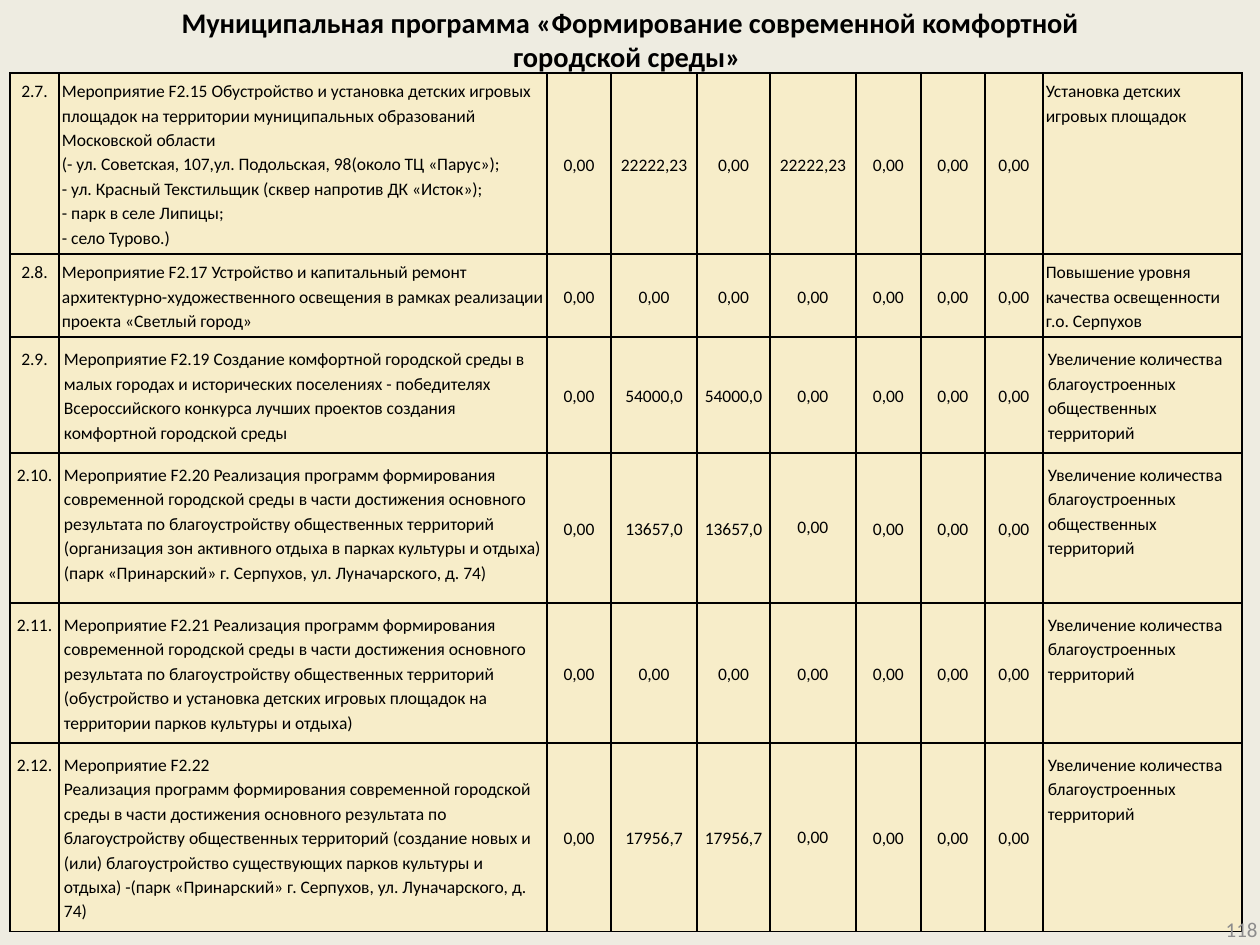
from copy import deepcopy

from lxml.etree import SubElement
from pptx import Presentation
from pptx.dml.color import RGBColor as RGB
from pptx.enum.text import MSO_ANCHOR as ANCHOR, MSO_AUTO_SIZE as AUTO, PP_ALIGN as ALIGN
from pptx.oxml.ns import qn
from pptx.util import Pt

COLORS = {"bg": "EEECE1", "cell": "F7EDC9", "text": "000000", "number": "8C8C8C"}
PX = 914400 / 126
COLS = [49, 488, 64, 86, 73, 86, 65, 64, 58, 199]
HEIGHTS = [181, 83, 115, 150, 139, 187]
TIGHT, LOOSE = (3, 5), (5, 9)
ZERO = "0,00"
PROGRAM = (
    "Реализация программ формирования современной городской среды в части достижения "
    "основного результата по благоустройству общественных территорий "
)
PARK = "(парк «Принарский» г. Серпухов, ул. Луначарского, д. 74)"
GROWTH = "Увеличение количества благоустроенных территорий"
PUBLIC_GROWTH = "Увеличение количества благоустроенных общественных территорий"

ROWS = [
    (
        "2.7.",
        "Мероприятие F2.15 Обустройство и установка детских игровых площадок на территории "
        "муниципальных образований Московской области\n"
        "(- ул. Советская, 107,ул. Подольская, 98(около ТЦ «Парус»);\v"
        "- ул. Красный Текстильщик (сквер напротив ДК «Исток»);\v"
        "- парк в селе Липицы;\v- село Турово.)",
        {1: "22222,23", 3: "22222,23"},
        "Установка детских игровых площадок",
    ),
    (
        "2.8.",
        "Мероприятие F2.17 Устройство и капитальный ремонт архитектурно-художественного "
        "освещения в рамках реализации проекта «Светлый город»",
        {},
        "Повышение уровня качества освещенности г.о. Серпухов",
    ),
    (
        "2.9.",
        "Мероприятие F2.19 Создание комфортной городской среды в малых городах и исторических "
        "поселениях - победителях Всероссийского конкурса лучших проектов создания "
        "комфортной городской среды",
        {1: "54000,0", 2: "54000,0"},
        PUBLIC_GROWTH,
    ),
    (
        "2.10.",
        "Мероприятие F2.20 " + PROGRAM
        + "(организация зон активного отдыха в парках культуры и отдыха) " + PARK,
        {1: "13657,0", 2: "13657,0"},
        PUBLIC_GROWTH,
    ),
    (
        "2.11.",
        "Мероприятие F2.21 " + PROGRAM
        + "(обустройство и установка детских игровых площадок на территории парков "
        "культуры и отдыха)",
        {},
        GROWTH,
    ),
    (
        "2.12.",
        "Мероприятие F2.22\n" + PROGRAM
        + "(создание новых и (или) благоустройство существующих парков культуры и отдыха) -" + PARK,
        {1: "17956,7", 2: "17956,7"},
        GROWTH,
    ),
]
SINGLE_SPACED = {(3, 5), (5, 5)}


def px(n):
    """Convert pixels to EMU."""
    return round(n * PX)


class Deck:
    """Holds the style and the current slide."""

    def __init__(self, prs, font="Calibri"):
        """Add a title-only slide with the background colour."""
        self.font = font
        self.s = prs.slides.add_slide(prs.slide_layouts[5])
        self.fill(self.s.background.fill, "bg")

    def fill(self, fill, color):
        """Apply a solid fill."""
        fill.solid()
        fill.fore_color.rgb = RGB.from_string(COLORS[color])

    def text(self, tf, text, size, align, color="text", bold=False, spacing=1.0):
        """Set the text and format its runs and line breaks."""
        tf.text = text
        tf.word_wrap = True
        for p in tf.paragraphs:
            p.alignment = align
            p.line_spacing = spacing
            for r in p.runs:
                r.font.name = self.font
                r.font.size = Pt(size)
                r.font.bold = bold
                r.font.color.rgb = RGB.from_string(COLORS[color])
            for br in p._p.findall(qn("a:br")):
                br.append(deepcopy(p.runs[0]._r.rPr))

    def place(self, sp, x, y, w, h):
        """Position a shape and centre its text vertically."""
        sp.left, sp.top, sp.width, sp.height = map(px, (x, y, w, h))
        sp.text_frame.auto_size = AUTO.NONE
        sp.text_frame.vertical_anchor = ANCHOR.MIDDLE

    def title(self, text, *box):
        """Fill the title placeholder."""
        sp = self.s.shapes.title
        self.place(sp, *box)
        self.text(sp.text_frame, text, 16.2, ALIGN.CENTER, bold=True)

    def number(self, text, *box):
        """Add the page number."""
        sp = self.s.shapes.add_textbox(0, 0, 0, 0)
        self.place(sp, *box)
        self.text(sp.text_frame, text, 12, ALIGN.RIGHT, "number")

    def borders(self, cell):
        """Draw thin lines on all four sides of a cell."""
        tc_pr = cell._tc.get_or_add_tcPr()
        for side in "LRTB":
            ln = SubElement(tc_pr, qn(f"a:ln{side}"), w=str(Pt(1)))
            SubElement(SubElement(ln, qn("a:solidFill")), qn("a:srgbClr"), val=COLORS["text"])

    def cell(self, cell, text, margins, is_text, is_value, spacing):
        """Style and fill one table cell."""
        self.borders(cell)
        self.fill(cell.fill, "cell")
        cell.margin_left = cell.margin_right = px(margins[0])
        cell.margin_top = cell.margin_bottom = px(margins[1])
        cell.vertical_anchor = ANCHOR.MIDDLE if is_value else ANCHOR.TOP
        align = ALIGN.LEFT if is_text else ALIGN.CENTER
        self.text(cell.text_frame, text, 10, align, spacing=spacing)

    def table(self, rows, x, y):
        """Add the table of activities."""
        size = map(px, (x, y, sum(COLS), sum(HEIGHTS)))
        tbl = self.s.shapes.add_table(len(rows), len(COLS), *size).table
        tbl.first_row = tbl.horz_banding = False
        for col, w in zip(tbl.columns, COLS):
            col.width = px(w)
        for i, (number, activity, amounts, result) in enumerate(rows):
            tbl.rows[i].height = px(HEIGHTS[i])
            values = [amounts.get(k, ZERO) for k in range(7)]
            for j, text in enumerate([number, activity, *values, result]):
                margins = TIGHT if i < 2 else LOOSE
                spacing = 1.0 if (i, j) in SINGLE_SPACED else 1.15
                self.cell(tbl.cell(i, j), text, margins, j in (1, 9), 2 <= j <= 8, spacing)


def main():
    """Build and save the slide."""
    prs = Presentation()
    prs.slide_width, prs.slide_height = px(1260), px(945)
    deck = Deck(prs)
    deck.table(ROWS, 10, 73)
    deck.title(
        "Муниципальная программа «Формирование современной комфортной\vгородской среды» ",
        63, -8, 1134, 94,
    )
    deck.number("118", 977, 904, 293, 50)
    prs.save("out.pptx")


if __name__ == "__main__":
    main()
